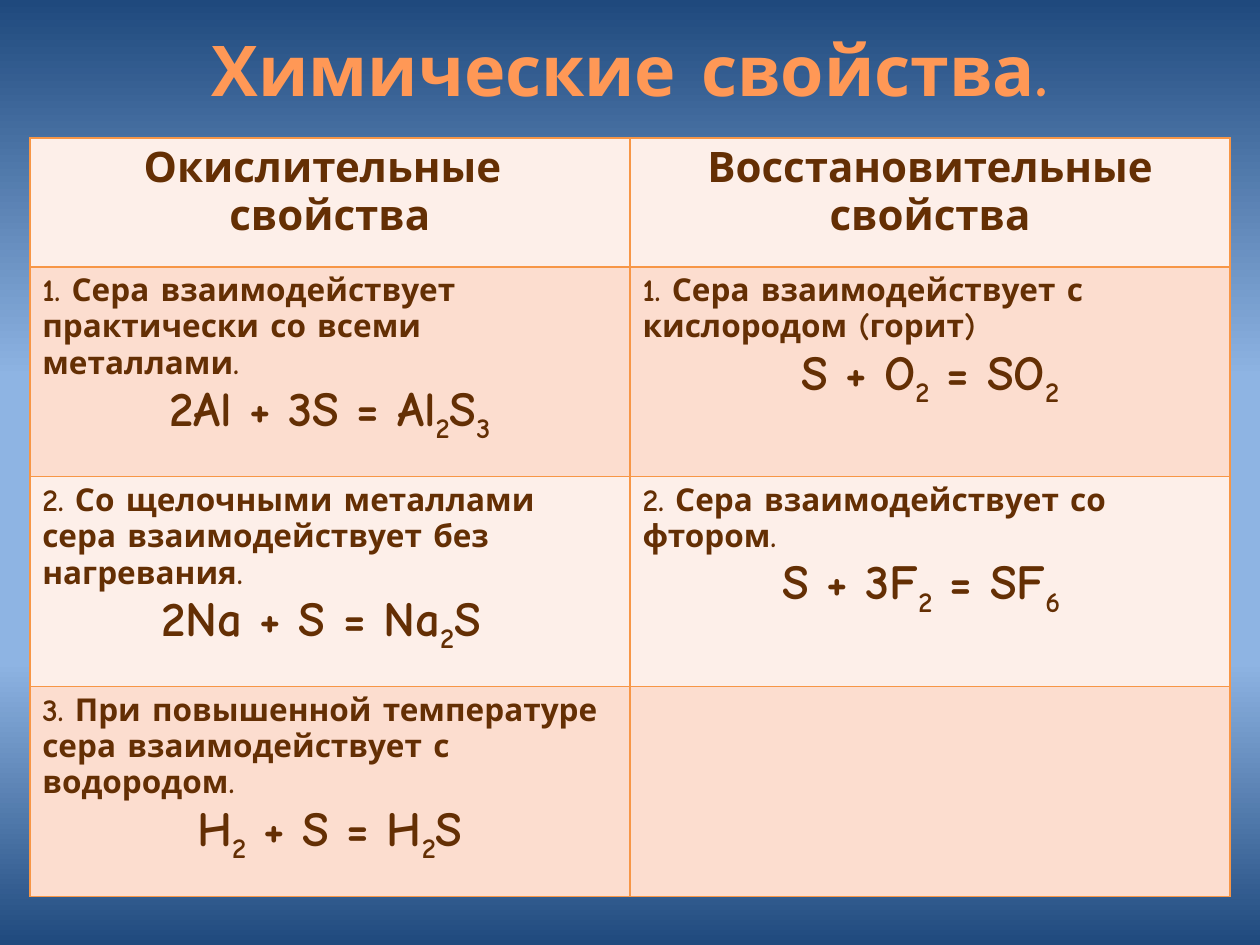
"""Builds a slide with a table of the chemical properties of sulfur."""
from dataclasses import dataclass

from lxml import etree
from pptx import Presentation
from pptx import util as u
from pptx.dml import color
from pptx.enum import text
from pptx.oxml import ns

FONT = "Comic Neue"
COLORS = {
    "night": "1F497D",
    "sky": "8EB4E3",
    "heading": "FF9856",
    "ink": "642F04",
    "border": "F79646",
    "light": "FDEFE9",
    "dark": "FCDDCF",
}
BACKDROP = ((0, "night"), (40, "sky"), (70, "sky"), (100, "night"))
COLUMN_WIDTH = u.Cm(12.1)
HEADER_HEIGHT, REACTION_HEIGHT = u.Cm(2.6), u.Cm(4.23)


@dataclass(frozen=True)
class Line:
    """A paragraph, where an underscore lowers the character after it."""
    wording: str
    size: int
    centered: bool = True


def header(*wordings: str) -> list[Line]:
    """Return the lines of a column heading."""
    return [Line(wording, 24) for wording in wordings]


def reaction(statement: str, equation: str) -> list[Line]:
    """Return a statement followed by its equation."""
    return [Line(statement, 18, centered=False), Line(equation, 28)]


ROWS = [
    [header("Окислительные ", "свойства"), header("Восстановительные свойства")],
    [
        reaction("1. Сера взаимодействует практически со всеми металлами.",
                 "2Al + 3S = Al_2S_3"),
        reaction("1. Сера взаимодействует с кислородом (горит)", "S + O_2 = SO_2"),
    ],
    [
        reaction("2. Со щелочными металлами сера взаимодействует без нагревания.",
                 "2Na + S = Na_2S "),
        reaction("2. Сера взаимодействует со фтором.", "S + 3F_2 = SF_6 "),
    ],
    [
        reaction("3. При повышенной температуре сера взаимодействует с водородом.",
                 "H_2 + S = H_2S"),
        [],
    ],
]


def add_run(paragraph, wording: str, *, size: int, ink: str = "ink",
            lowered: bool = False) -> None:
    """Add bold text to a paragraph, as a subscript if lowered."""
    if not wording:
        return
    run = paragraph.add_run()
    run.text = wording
    run.font.name = FONT
    run.font.size = u.Pt(size)
    run.font.bold = True
    run.font.color.rgb = color.RGBColor.from_string(COLORS[ink])
    if lowered:
        run._r.get_or_add_rPr().set("baseline", "-25000")


def write_lines(frame, lines: list[Line], ink: str = "ink") -> None:
    """Write lines into a text frame, one paragraph each."""
    for index, line in enumerate(lines):
        paragraph = frame.add_paragraph() if index else frame.paragraphs[0]
        paragraph.alignment = (text.PP_ALIGN.CENTER if line.centered
                               else text.PP_ALIGN.LEFT)
        start, *rest = line.wording.split("_")
        add_run(paragraph, start, size=line.size, ink=ink)
        for chunk in rest:
            add_run(paragraph, chunk[:1], size=line.size, ink=ink, lowered=True)
            add_run(paragraph, chunk[1:], size=line.size, ink=ink)


def add_solid(parent, name: str) -> None:
    """Add a colour element to an XML parent."""
    etree.SubElement(parent, ns.qn("a:srgbClr"), val=COLORS[name])


def paint_backdrop(slide) -> None:
    """Fill the slide background with a vertical gradient."""
    fill = slide.background.fill
    fill.gradient()
    fill.gradient_angle = 270
    stops = slide.element.find(".//" + ns.qn("a:gsLst"))
    for old_stop in list(stops):
        stops.remove(old_stop)
    for percent, name in BACKDROP:
        stop = etree.SubElement(stops, ns.qn("a:gs"), pos=str(percent * 1000))
        add_solid(stop, name)


def format_cell(cell, fill: str) -> None:
    """Give a cell its four borders and its fill."""
    properties = cell._tc.get_or_add_tcPr()
    for side in ("lnL", "lnR", "lnT", "lnB"):
        border = etree.SubElement(properties, ns.qn(f"a:{side}"), w=str(u.Pt(1)))
        add_solid(etree.SubElement(border, ns.qn("a:solidFill")), "border")
    cell.fill.solid()
    cell.fill.fore_color.rgb = color.RGBColor.from_string(COLORS[fill])


def add_heading(slide) -> None:
    """Place and write the slide title."""
    title = slide.shapes.title
    title.left, title.top = u.Cm(0.6), u.Cm(0.41)
    title.width, title.height = 2 * COLUMN_WIDTH, u.Cm(1.96)
    title.text_frame.auto_size = text.MSO_AUTO_SIZE.SHAPE_TO_FIT_TEXT
    title.text_frame.vertical_anchor = text.MSO_ANCHOR.MIDDLE
    write_lines(title.text_frame, [Line("Химические свойства.", 40)], "heading")


def add_properties(slide) -> None:
    """Add the table of oxidising and reducing properties."""
    heights = [HEADER_HEIGHT] + [REACTION_HEIGHT] * (len(ROWS) - 1)
    table = slide.shapes.add_table(
        len(ROWS), len(ROWS[0]), u.Cm(0.6), u.Cm(2.78),
        2 * COLUMN_WIDTH, sum(heights)).table
    table.first_row = table.horz_banding = False
    for column in table.columns:
        column.width = COLUMN_WIDTH
    for row_index, (cells, height) in enumerate(zip(ROWS, heights)):
        table.rows[row_index].height = height
        for column_index, lines in enumerate(cells):
            cell = table.cell(row_index, column_index)
            format_cell(cell, "dark" if row_index % 2 else "light")
            write_lines(cell.text_frame, lines)


def main() -> None:
    """Build and save the presentation."""
    deck = Presentation()
    deck.slide_width, deck.slide_height = u.Cm(25.4), u.Cm(19.05)
    slide = deck.slides.add_slide(deck.slide_layouts.get_by_name("Title Only"))
    paint_backdrop(slide)
    add_heading(slide)
    add_properties(slide)
    deck.save("out.pptx")


if __name__ == "__main__":
    main()
